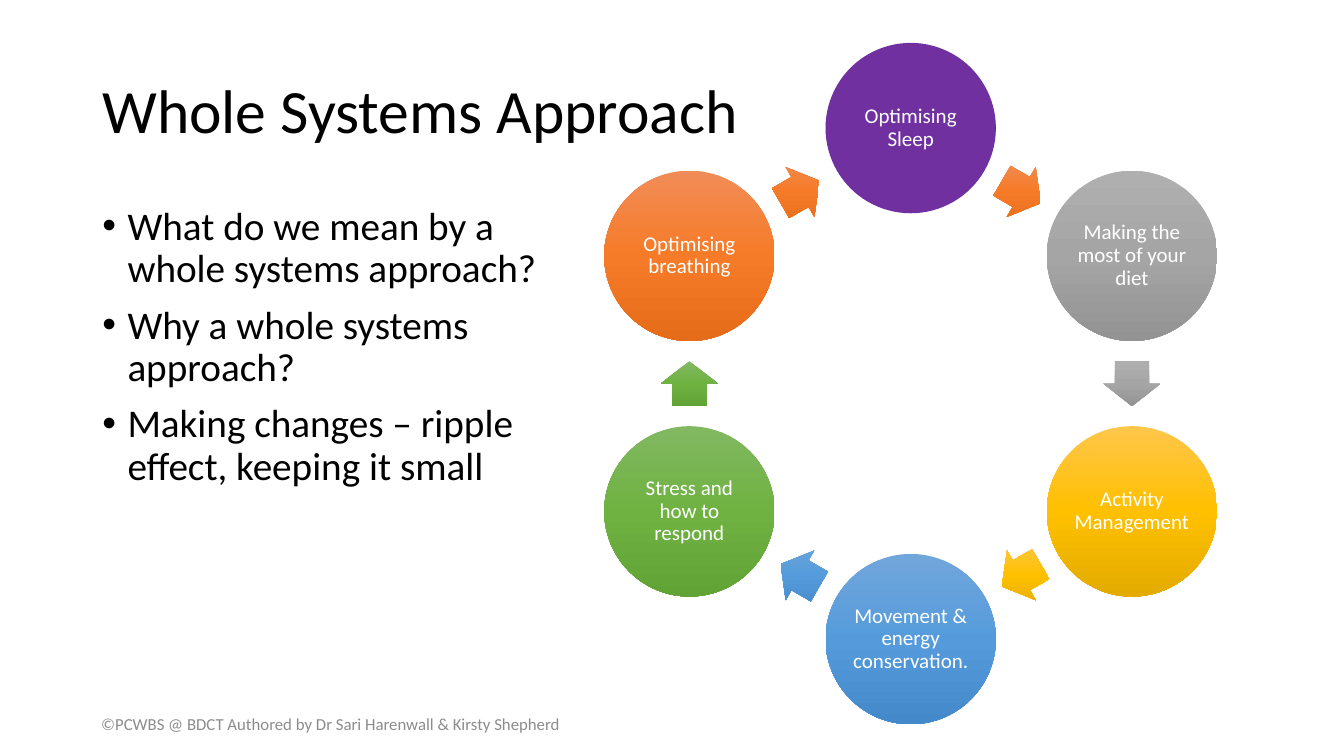
import copy
import math
from dataclasses import dataclass

from lxml import etree
from pptx import Presentation
from pptx.dml.color import RGBColor
from pptx.enum import shapes, text
from pptx.oxml import ns
from pptx.util import Pt


@dataclass(frozen=True)
class Theme:
    font: str = "Calibri"
    title_size: int = 44
    body_size: int = 28
    circle_size: int = 15
    footer_size: int = 12
    ink: str = "000000"
    footer: str = "8C8C8C"
    on_circle: str = "FFFFFF"
    purple: tuple = ("7030A0",)
    grey: tuple = ("AFAFAF", "A5A5A5", "939393")
    gold: tuple = ("FFC64B", "FFC000", "E3AB00")
    blue: tuple = ("71A6DB", "559BDB", "448ACA")
    green: tuple = ("81B861", "6FB242", "62A336")
    orange: tuple = ("F18C57", "F67B28", "E56C19")


theme = Theme()
deck = Presentation()
deck.slide_width, deck.slide_height = Pt(960), Pt(540)
page = deck.slides.add_slide(deck.slide_layouts[6])


def write(box, wording, size, colour, anchor, align, spacing=0.9):
    """Fill a shape with text, one paragraph per line of wording."""
    frame = box.text_frame
    frame.word_wrap = True
    frame.vertical_anchor = anchor
    frame.text = wording
    for para in frame.paragraphs:
        para.alignment = align
        para.line_spacing = spacing
        for span in para.runs:
            span.font.name = theme.font
            span.font.size = Pt(size)
            span.font.color.rgb = RGBColor.from_string(colour)


def add_filled(preset, centre_x, centre_y, width, height, colours):
    """Add a borderless shape by its centre, solid or with a vertical gradient."""
    shape = page.shapes.add_shape(
        preset, Pt(centre_x - width / 2), Pt(centre_y - height / 2), Pt(width), Pt(height))
    shape.shadow.inherit = False
    shape.line.fill.background()
    if len(colours) == 1:
        shape.fill.solid()
        shape.fill.fore_color.rgb = RGBColor.from_string(colours[0])
        return shape
    shape.fill.gradient()
    shape.fill.gradient_angle = 270
    gradient = shape._element.spPr.find(ns.qn("a:gradFill"))
    gradient.set("rotWithShape", "0")
    first_stop = gradient.find(ns.qn("a:gsLst"))[0]
    first_stop.addnext(copy.deepcopy(first_stop))
    for stop, position, colour in zip(shape.fill.gradient_stops, (0, 0.5, 1), colours):
        stop.position = position
        stop.color.rgb = RGBColor.from_string(colour)
    return shape


# Title, questions and footer
title = page.shapes.add_textbox(Pt(66), Pt(29), Pt(477), Pt(104))
write(title, "Whole Systems Approach", theme.title_size, theme.ink,
      text.MSO_ANCHOR.MIDDLE, text.PP_ALIGN.LEFT)

questions = page.shapes.add_textbox(Pt(66), Pt(144), Pt(369.5), Pt(343))
write(questions,
      "What do we mean by a whole systems approach?\n"
      "Why a whole systems approach?\n"
      "Making changes – ripple effect, keeping it small",
      theme.body_size, theme.ink, text.MSO_ANCHOR.TOP, text.PP_ALIGN.LEFT)
for index, para in enumerate(questions.text_frame.paragraphs):
    para.space_before = Pt(10 if index else 0)
    properties = para._p.get_or_add_pPr()
    properties.set("marL", str(Pt(18)))
    properties.set("indent", str(Pt(-18)))
    etree.SubElement(properties, ns.qn("a:buFont")).set("typeface", "Arial")
    etree.SubElement(properties, ns.qn("a:buChar")).set("char", "•")

footer = page.shapes.add_textbox(Pt(32.5), Pt(502.5), Pt(407.5), Pt(29))
write(footer, "©PCWBS @ BDCT Authored by Dr Sari Harenwall & Kirsty Shepherd",
      theme.footer_size, theme.footer, text.MSO_ANCHOR.MIDDLE, text.PP_ALIGN.CENTER, 1.0)

# Cycle: label, circle colours, colours of the arrow to the next circle
steps = [
    ("Optimising Sleep", theme.purple, theme.orange),
    ("Making the most of your diet", theme.grey, theme.grey),
    ("Activity Management", theme.gold, theme.gold),
    ("Movement & energy conservation.", theme.blue, theme.blue),
    ("Stress and how to respond", theme.green, theme.green),
    ("Optimising breathing", theme.orange, theme.orange),
]
ring_x, ring_y, ring_radius = 650.5, 274, 182.5
circle_diameter = 121.7
arrow_width, arrow_height = 32, 41
step_angle = 360 / len(steps)
arrow_distance = ring_radius * math.cos(math.radians(step_angle / 2))

for index, (label, circle_colours, arrow_colours) in enumerate(steps):
    angle = math.radians(index * step_angle - 90)
    circle = add_filled(
        shapes.MSO_SHAPE.OVAL,
        ring_x + ring_radius * math.cos(angle), ring_y + ring_radius * math.sin(angle),
        circle_diameter, circle_diameter, circle_colours)
    frame = circle.text_frame
    frame.margin_left = frame.margin_right = frame.margin_top = frame.margin_bottom = Pt(1.5)
    write(circle, label, theme.circle_size, theme.on_circle,
          text.MSO_ANCHOR.MIDDLE, text.PP_ALIGN.CENTER)

    heading = (index + 0.5) * step_angle
    angle = math.radians(heading - 90)
    arrow = add_filled(
        shapes.MSO_SHAPE.RIGHT_ARROW,
        ring_x + arrow_distance * math.cos(angle), ring_y + arrow_distance * math.sin(angle),
        arrow_width, arrow_height, arrow_colours)
    arrow.adjustments[0], arrow.adjustments[1] = 0.6, 0.5
    arrow.rotation = heading

deck.save("out.pptx")
